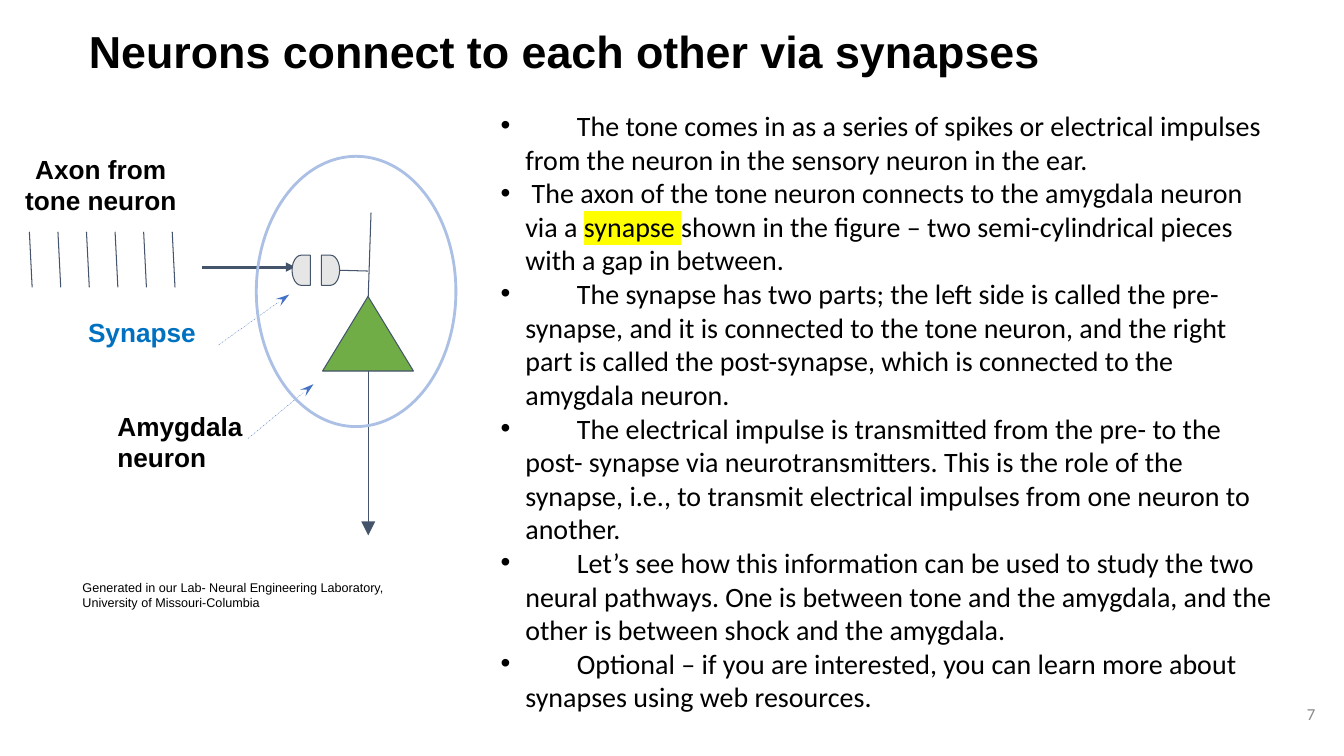
from dataclasses import dataclass

from lxml.etree import SubElement
from pptx import Presentation
from pptx.dml.color import RGBColor
from pptx.enum.dml import MSO_LINE
from pptx.enum.shapes import MSO_CONNECTOR, MSO_SHAPE
from pptx.enum.text import MSO_ANCHOR, MSO_AUTO_SIZE, PP_ALIGN
from pptx.oxml.ns import qn
from pptx.util import Cm, Pt

INK = "44546A"
BLACK = "000000"
POINTER = "4472C4"


@dataclass
class Span:
    text: str
    highlight: str = ""


@dataclass
class Style:
    size: float
    font: str = "Arial"
    color: str = BLACK
    bold: bool = False


@dataclass
class Label:
    text: str
    place: tuple[float, float, float, float]
    style: Style
    align: PP_ALIGN = PP_ALIGN.LEFT
    anchor: MSO_ANCHOR = MSO_ANCHOR.TOP


@dataclass
class Line:
    start: tuple[float, float]
    end: tuple[float, float]
    color: str = INK
    width: float = 0.75
    head: str = ""
    head_width: str = "med"
    head_length: str = "med"
    dashed: bool = False


@dataclass
class Part:
    kind: MSO_SHAPE
    place: tuple[float, float, float, float]
    fill: str = ""
    color: str = INK
    width: float = 0.75
    rotation: float = 0


LABEL = Style(18.7, bold=True)
BODY = Style(20, "Calibri")

LABELS = [
    Label("Axon from tone neuron", (0.38, 3.74, 4.32, 1.85), LABEL, PP_ALIGN.CENTER),
    Label("Amygdala neuron", (2.71, 10.21, 4.6, 1.85), LABEL),
    Label("Synapse", (1.97, 7.85, 5.38, 1.07), Style(18.7, color="0070C0", bold=True)),
    Label("Generated in our Lab- Neural Engineering Laboratory, "
          "University of Missouri-Columbia", (1.83, 14.48, 8.43, 1.02), Style(9)),
    Label("7", (31.37, 17.27, 2.03, 1.45), Style(12, "Calibri", "888888"),
          PP_ALIGN.RIGHT, MSO_ANCHOR.MIDDLE),
]

SPIKES = [Line((0.74 + 0.72 * i, 5.84), (0.81 + 0.72 * i, 7.24)) for i in range(6)]
LINES = SPIKES + [
    Line((5.08, 6.73), (7.44, 6.73), width=2.25, head="triangle"),
    Line((9.28, 7.47), (9.35, 5.36)),
    Line((8.56, 6.81), (9.28, 6.83)),
    Line((9.28, 9.35), (9.28, 13.49), head="triangle",
         head_width="lg", head_length="lg"),
    Line((6.25, 11.05), (7.9, 9.68), POINTER, 0.25, "stealth",
         head_length="lg", dashed=True),
    Line((5.51, 8.69), (7.29, 7.42), POINTER, 0.25, "stealth",
         head_length="lg", dashed=True),
]

PARTS = [
    Part(MSO_SHAPE.ISOSCELES_TRIANGLE, (8.13, 7.47, 2.29, 1.88), "70AD47"),
    Part(MSO_SHAPE.FLOWCHART_DELAY, (7.36, 6.43, 0.46, 0.76), "E7E6E6", rotation=180),
    Part(MSO_SHAPE.FLOWCHART_DELAY, (8.1, 6.43, 0.46, 0.76), "E7E6E6"),
    Part(MSO_SHAPE.OVAL, (6.46, 3.94, 5.03, 6.81), color="ABC0E4", width=2),
]

BULLETS = [
    [Span(" \tThe tone comes in as a series of spikes or electrical impulses from "
          "the neuron in the sensory neuron in the ear.")],
    [Span(" The axon of the tone neuron connects to the amygdala neuron via a "),
     Span("synapse ", "FFFF00"),
     Span("shown in the figure – two semi-cylindrical pieces with a gap in between.")],
    [Span(" \tThe synapse has two parts; the left side is called the pre-synapse, and "
          "it is connected to the tone neuron, and the right part is called the "
          "post-synapse, which is connected to the amygdala neuron.")],
    [Span(" \tThe electrical impulse is transmitted from the pre- to the post- synapse "
          "via neurotransmitters. This is the role of the synapse, i.e., to transmit "
          "electrical impulses from one neuron to another.")],
    [Span(" \tLet’s see how this information can be used to study the two neural "
          "pathways. One is between tone and the amygdala, and the other is between "
          "shock and the amygdala.")],
    [Span(" \tOptional – if you are interested, you can learn more about synapses "
          "using web resources.")],
]


def rgb(color: str) -> RGBColor:
    return RGBColor.from_string(color)


def set_place(shape, place: tuple) -> None:
    shape.left, shape.top, shape.width, shape.height = map(Cm, place)


def set_font(font, style: Style) -> None:
    font.size, font.name, font.bold = Pt(style.size), style.font, style.bold
    font.color.rgb = rgb(style.color)


def add_span(para, span: Span, style: Style) -> None:
    run = para.add_run()
    run.text = span.text
    set_font(run.font, style)
    if span.highlight:
        properties = run.font._element
        mark = SubElement(properties, qn("a:highlight"))
        SubElement(mark, qn("a:srgbClr"), val=span.highlight)
        properties.find(qn("a:solidFill")).addnext(mark)


def add_box(page, place: tuple):
    box = page.shapes.add_textbox(*map(Cm, place))
    box.text_frame.word_wrap = True
    return box


def add_label(page, label: Label) -> None:
    frame = add_box(page, label.place).text_frame
    frame.vertical_anchor = label.anchor
    para = frame.paragraphs[0]
    para.alignment = label.align
    add_span(para, Span(label.text), label.style)


def add_title(page, text: str) -> None:
    title = page.shapes.title
    set_place(title, (1.55, 0.48, 25.37, 1.63))
    frame = title.text_frame
    frame.auto_size = MSO_AUTO_SIZE.NONE
    frame.vertical_anchor = MSO_ANCHOR.TOP
    para = frame.paragraphs[0]
    para.alignment = PP_ALIGN.CENTER
    add_span(para, Span(text), Style(32, bold=True))


def add_bullets(page, bullets: list[list[Span]]) -> None:
    frame = add_box(page, (12.37, 2.61, 20.07, 15.52)).text_frame
    hang = Cm(0.62)
    for index, spans in enumerate(bullets):
        para = frame.add_paragraph() if index else frame.paragraphs[0]
        properties = para._p.get_or_add_pPr()
        properties.set("marL", str(hang))
        properties.set("indent", str(-hang))
        SubElement(properties, qn("a:buFont"), typeface="Arial")
        SubElement(properties, qn("a:buChar"), char="•")
        tabs = SubElement(properties, qn("a:tabLst"))
        SubElement(tabs, qn("a:tab"), pos=str(Cm(1.92)), algn="l")
        for span in spans:
            add_span(para, span, BODY)


def add_line(page, line: Line) -> None:
    connector = page.shapes.add_connector(
        MSO_CONNECTOR.STRAIGHT, *map(Cm, line.start + line.end))
    connector.line.color.rgb = rgb(line.color)
    connector.line.width = Pt(line.width)
    if line.dashed:
        connector.line.dash_style = MSO_LINE.DASH_DOT
    if line.head:
        SubElement(connector.line._get_or_add_ln(), qn("a:tailEnd"),
                   type=line.head, w=line.head_width, len=line.head_length)
    SubElement(connector._element.spPr, qn("a:effectLst"))


def add_part(page, part: Part) -> None:
    shape = page.shapes.add_shape(part.kind, *map(Cm, part.place))
    shape.shadow.inherit = False
    shape.rotation = part.rotation
    shape.line.color.rgb = rgb(part.color)
    shape.line.width = Pt(part.width)
    if part.fill:
        shape.fill.solid()
        shape.fill.fore_color.rgb = rgb(part.fill)
    else:
        shape.fill.background()


def main() -> None:
    deck = Presentation()
    deck.slide_width, deck.slide_height = Cm(33.87), Cm(19.05)
    page = deck.slides.add_slide(deck.slide_layouts[5])
    add_title(page, "Neurons connect to each other via synapses")
    add_bullets(page, BULLETS)
    for line in LINES:
        add_line(page, line)
    for part in PARTS:
        add_part(page, part)
    for label in LABELS:
        add_label(page, label)
    deck.save("out.pptx")


if __name__ == "__main__":
    main()
